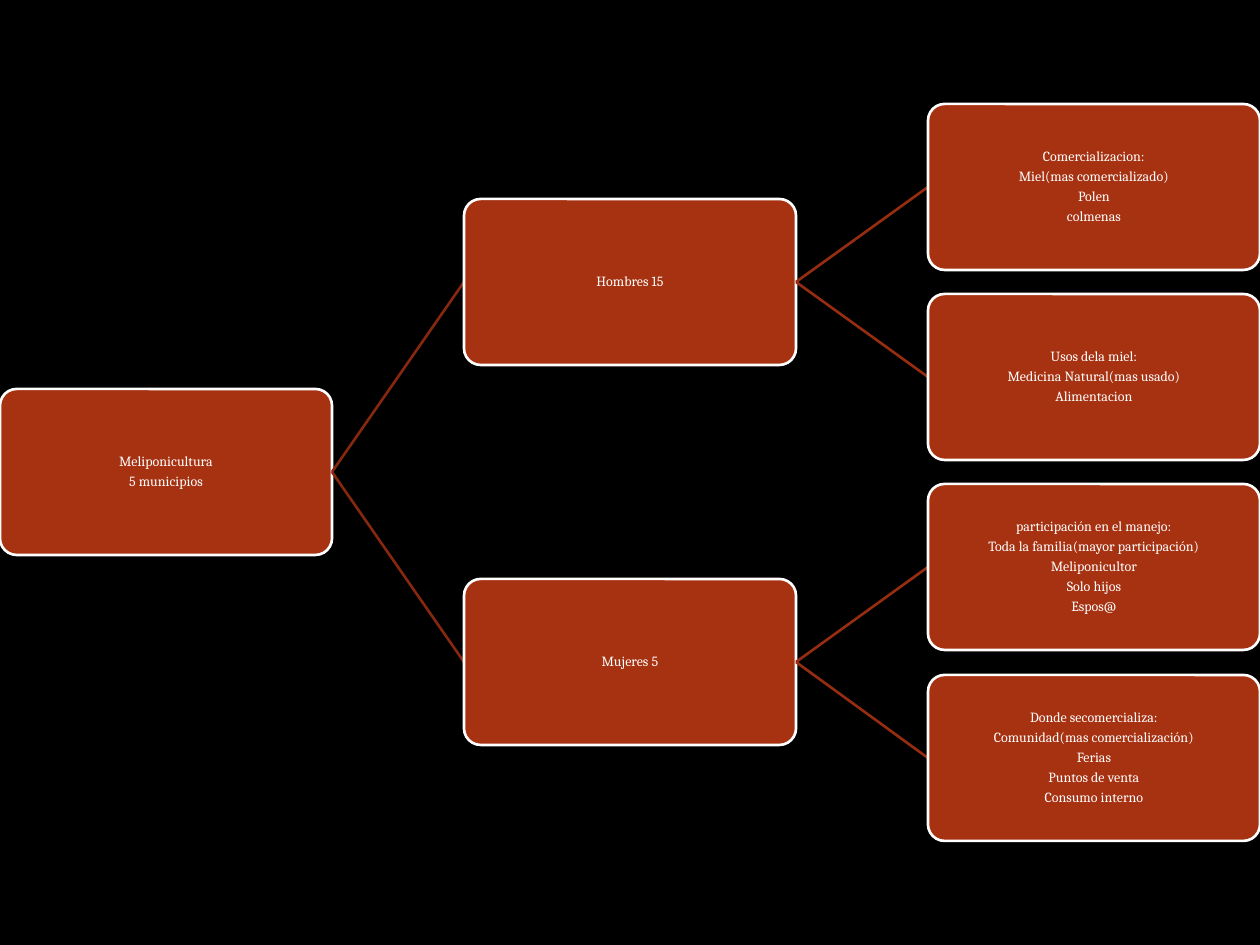
from lxml import etree
from pptx import Presentation
from pptx import util as u
from pptx.dml.color import RGBColor
from pptx.enum import shapes, text
from pptx.oxml.ns import qn

PX = 914400 / 126
WIDE, HIGH = 1260, 945
BOX_W, BOX_H = 332, 166
STEP = (WIDE - BOX_W) // 2
TOP, SPAN = 187, 571
PAD = 6
BLACK = RGBColor(0x00, 0x00, 0x00)
WHITE = RGBColor(0xFF, 0xFF, 0xFF)
RUST = RGBColor(0xA6, 0x32, 0x12)
LINKS = RGBColor(0x85, 0x28, 0x0E), RGBColor(0x97, 0x2D, 0x10)

LEAVES = [
    ["Comercializacion:", "Miel(mas comercializado)", "Polen", "colmenas"],
    ["Usos dela miel:", "Medicina Natural(mas usado)", "Alimentacion"],
    ["participación en el manejo:", "Toda la familia(mayor participación)",
     "Meliponicultor", "Solo hijos", "Espos@"],
    ["Donde secomercializa:", "Comunidad(mas comercialización)", "Ferias",
     "Puntos de venta", "Consumo interno"],
]
GROUPS = [["Hombres 15"], ["Mujeres 5"]]
ROOT = ["Meliponicultura", "5 municipios"]


def px(num):
    """Turn pixels into EMU."""
    return u.Emu(round(num * PX))


def add_box(slide, col, mid, lines):
    """Add a rounded box centred on a height, with its lines of text."""
    box = slide.shapes.add_shape(
        shapes.MSO_SHAPE.ROUNDED_RECTANGLE,
        px(col * STEP), px(mid - BOX_H // 2), px(BOX_W), px(BOX_H))
    box.adjustments[0] = 0.1
    box.shadow.inherit = False
    box.fill.solid()
    box.fill.fore_color.rgb = RUST
    box.line.color.rgb = WHITE
    box.line.width = u.Pt(1.5)
    frame = box.text_frame
    frame.word_wrap = True
    frame.vertical_anchor = text.MSO_ANCHOR.MIDDLE
    frame.margin_left = frame.margin_right = px(PAD)
    frame.margin_top = frame.margin_bottom = px(PAD)
    frame.text = "\n".join(lines)
    for para in frame.paragraphs:
        para.alignment = text.PP_ALIGN.CENTER
        para.line_spacing = 0.9
        para.space_after = u.Pt(2.8)
        para.font.name = "Cambria"
        para.font.size = u.Pt(8)
        para.font.color.rgb = WHITE


def add_link(slide, col, start, end):
    """Join a box in a column to a box in the next column."""
    left = col * STEP + BOX_W
    link = slide.shapes.add_connector(
        shapes.MSO_CONNECTOR.STRAIGHT,
        px(left), px(start), px((col + 1) * STEP), px(end))
    link.line.color.rgb = LINKS[col]
    link.line.width = u.Pt(1.5)
    etree.SubElement(link._element.spPr, qn("a:effectLst"))


def add_tree(slide):
    """Add the root, its groups and their leaves."""
    rows = [TOP + SPAN * i // 3 for i in range(len(LEAVES))]
    mids = [sum(rows[i:i + 2]) // 2 for i in (0, 2)]
    root = sum(mids) // 2
    add_box(slide, 0, root, ROOT)
    for i, (mid, group) in enumerate(zip(mids, GROUPS)):
        add_link(slide, 0, root, mid)
        add_box(slide, 1, mid, group)
        for j in (2 * i, 2 * i + 1):
            add_link(slide, 1, mid, rows[j])
            add_box(slide, 2, rows[j], LEAVES[j])


def main():
    """Build the slide and save it."""
    deck = Presentation()
    deck.slide_width, deck.slide_height = px(WIDE), px(HIGH)
    slide = deck.slides.add_slide(deck.slide_layouts[6])
    slide.background.fill.solid()
    slide.background.fill.fore_color.rgb = BLACK
    add_tree(slide)
    deck.save("out.pptx")


if __name__ == "__main__":
    main()
